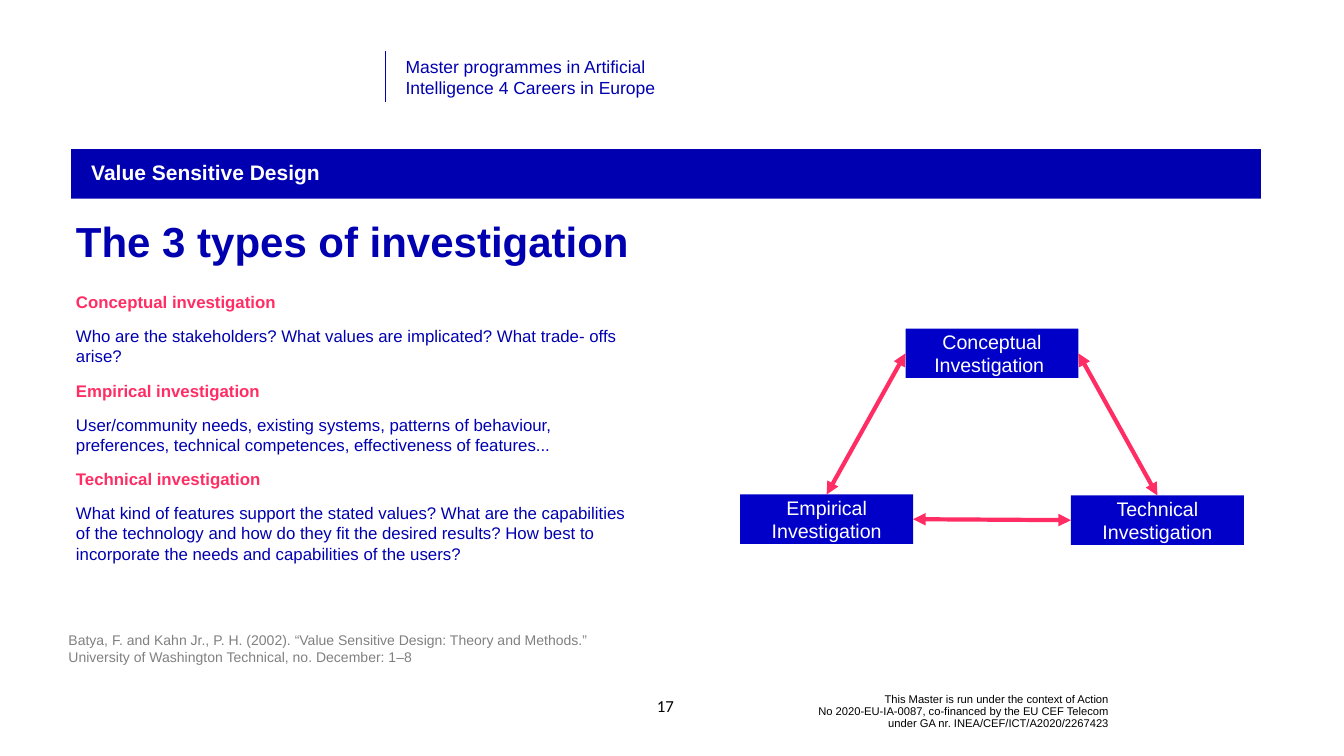
from copy import deepcopy
from dataclasses import dataclass

from lxml import etree
from pptx import Presentation
from pptx.dml.color import RGBColor as RGB
from pptx.enum.shapes import MSO_CONNECTOR as CONN, MSO_SHAPE as SHAPE
from pptx.enum.text import MSO_ANCHOR as ANCHOR, PP_ALIGN as ALIGN
from pptx.oxml.ns import qn
from pptx.util import Cm, Pt


@dataclass(frozen=True)
class Theme:
    font: str = "Arial"
    number_font: str = "Calibri"
    navy: str = "0000B0"
    box: str = "0100C8"
    pink: str = "FF2D64"
    grey: str = "808080"
    black: str = "000000"
    white: str = "FFFFFF"
    title: int = 60
    band: int = 30
    label: int = 28
    header: int = 25
    body: int = 24
    source: int = 20
    footer: int = 16


TOP, LEFT, RIGHT = 0, 1, 3  # connection sites of a rectangle


class SlideBuilder:
    def __init__(self, slide, theme):
        self.s = slide
        self.t = theme

    def paragraph(self, p, text, size, color, bold=False, font=None,
                  align=ALIGN.LEFT, spacing=None):
        p.text = text
        p.alignment = align
        if spacing:
            p.line_spacing = spacing
        for r in p.runs:
            r.font.name = font or self.t.font
            r.font.size = Pt(size)
            r.font.bold = bold
            r.font.color.rgb = RGB.from_string(color)
        # Line breaks take the size of the text around them
        for br in p._p.findall(qn("a:br")):
            br.append(deepcopy(p.runs[0]._r.rPr))

    def frame(self, x, y, w, h, anchor=ANCHOR.TOP):
        tf = self.s.shapes.add_textbox(Cm(x), Cm(y), Cm(w), Cm(h)).text_frame
        tf.word_wrap = True
        tf.vertical_anchor = anchor
        return tf

    def text(self, x, y, w, h, text, size, color,
             anchor=ANCHOR.TOP, **style):
        tf = self.frame(x, y, w, h, anchor)
        self.paragraph(tf.paragraphs[0], text, size, color, **style)

    def sections(self, x, y, w, h, sections):
        tf = self.frame(x, y, w, h)
        p = tf.paragraphs[0]
        for i, (heading, detail) in enumerate(sections):
            if i:
                p = tf.add_paragraph()
                p.space_before = Pt(20)
            self.paragraph(p, heading, self.t.body, self.t.pink, bold=True)
            p = tf.add_paragraph()
            p.space_before = Pt(20)
            self.paragraph(p, detail, self.t.body, self.t.navy)

    def rect(self, x, y, w, h, fill, text, size, inset=0.25, **style):
        sp = self.s.shapes.add_shape(SHAPE.RECTANGLE, Cm(x), Cm(y), Cm(w), Cm(h))
        sp.shadow.inherit = False
        sp.fill.solid()
        sp.fill.fore_color.rgb = RGB.from_string(fill)
        sp.line.fill.background()
        tf = sp.text_frame
        tf.word_wrap = True
        tf.vertical_anchor = ANCHOR.MIDDLE
        tf.margin_left = Cm(inset)
        self.paragraph(tf.paragraphs[0], text, size, self.t.white, **style)
        return sp

    def line(self, x1, y1, x2, y2, color, width):
        c = self.s.shapes.add_connector(
            CONN.STRAIGHT, Cm(x1), Cm(y1), Cm(x2), Cm(y2))
        c.line.color.rgb = RGB.from_string(color)
        c.line.width = Pt(width)
        etree.SubElement(c._element.spPr, qn("a:effectLst"))
        return c

    def double_arrow(self, start, start_site, end, end_site):
        c = self.line(0, 0, 0, 0, self.t.pink, 6)
        c.begin_connect(start, start_site)
        c.end_connect(end, end_site)
        ln = c.line._get_or_add_ln()
        for tag in ("a:headEnd", "a:tailEnd"):
            etree.SubElement(ln, qn(tag), type="triangle")


def main():
    t = Theme()
    prs = Presentation()
    prs.slide_width, prs.slide_height = Cm(67.74), Cm(38.1)
    b = SlideBuilder(prs.slides.add_slide(prs.slide_layouts[6]), t)
    margin, full_width, bar_h = 3.58, 59.97, 2.49

    # Programme header
    b.line(19.43, 2.57, 19.43, 5.16, t.navy, 0.5)
    b.text(20.19, 2.69, 16.18, 2.39,
           "Master programmes in Artificial\nIntelligence 4 Careers in Europe",
           t.header, t.navy)

    # Topic band and title
    b.rect(margin, 7.52, full_width, bar_h, t.navy, "Value Sensitive Design",
           t.band, inset=1.02, bold=True, align=ALIGN.LEFT, spacing=0.9)
    b.text(margin, 10.82, full_width, 3.15, "The 3 types of investigation",
           t.title, t.navy, bold=True, spacing=Pt(70))

    # Investigation descriptions
    b.sections(margin, 14.58, 28.88, 17.93, [
        ("Conceptual investigation",
         "Who are the stakeholders? What values are implicated? "
         "What trade- offs arise?"),
        ("Empirical investigation",
         "User/community needs, existing systems, patterns of behaviour, "
         "preferences, technical competences, effectiveness of features..."),
        ("Technical investigation",
         "What kind of features support the stated values? What are the "
         "capabilities of the technology and how do they fit the desired "
         "results? How best to incorporate the needs and capabilities of "
         "the users?"),
    ])

    # Triangle of investigations
    conceptual, empirical, technical = [
        b.rect(x, y, 8.71, bar_h, t.box, label, t.label, align=ALIGN.CENTER)
        for x, y, label in [
            (45.64, 16.56, "Conceptual Investigation "),
            (37.31, 24.92, "Empirical Investigation"),
            (53.98, 24.97, "Technical Investigation"),
        ]
    ]
    b.double_arrow(conceptual, RIGHT, technical, TOP)
    b.double_arrow(conceptual, LEFT, empirical, TOP)
    b.double_arrow(technical, LEFT, empirical, RIGHT)

    # Source, page number and funding note
    b.text(3.2, 31.7, 29.64, 3.68,
           "Batya, F. and Kahn Jr., P. H. (2002). “Value Sensitive Design: "
           "Theory and Methods.” University of Washington Technical, "
           "no. December: 1–8", t.source, t.grey)
    b.text(32.13, 34.57, 2.82, 2.03, "17", t.body, t.black, ANCHOR.MIDDLE,
           font=t.number_font, align=ALIGN.CENTER)
    b.text(38.15, 34.9, 17.98, 1.93,
           "This Master is run under the context of Action\n"
           "No 2020-EU-IA-0087, co-financed by the EU CEF Telecom\n"
           "under GA nr. INEA/CEF/ICT/A2020/2267423",
           t.footer, t.black, ANCHOR.MIDDLE, align=ALIGN.RIGHT, spacing=0.9)

    prs.save("out.pptx")


if __name__ == "__main__":
    main()
